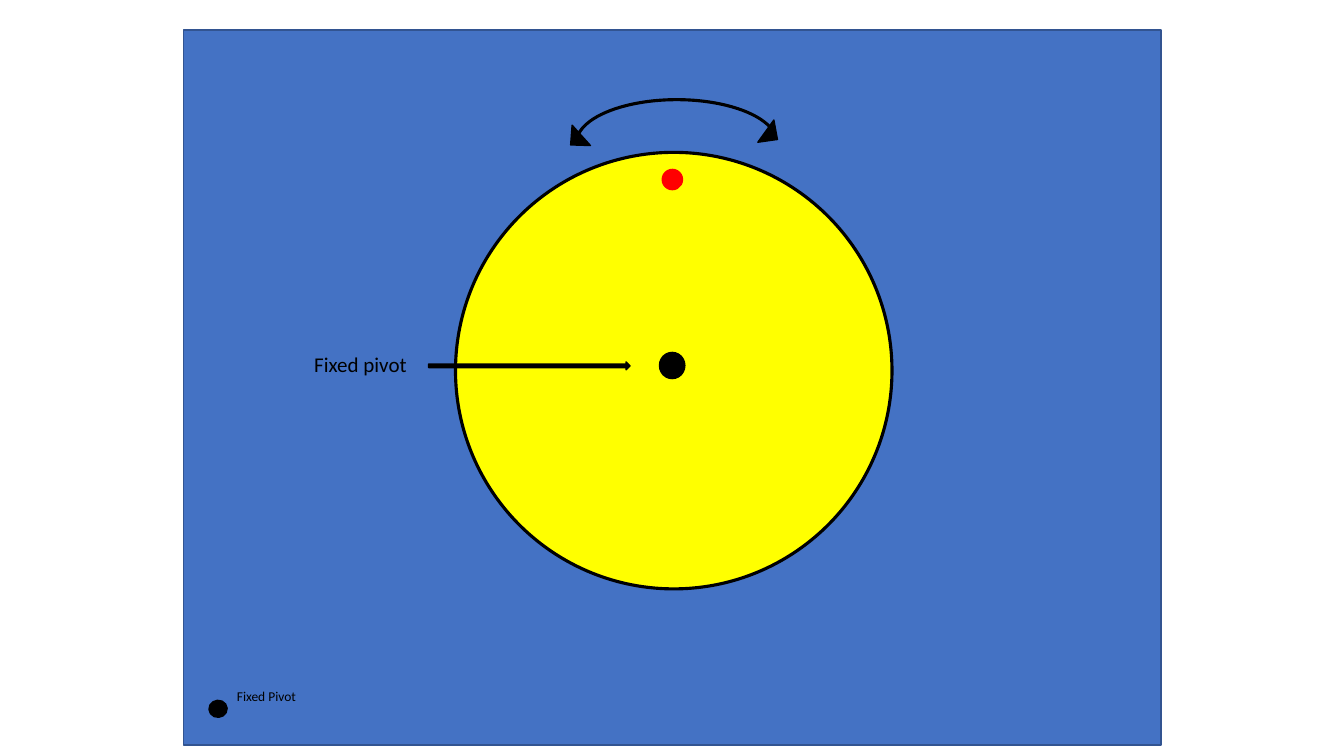
from dataclasses import dataclass

from pptx import Presentation
from pptx.dml.color import RGBColor
from pptx.enum.shapes import MSO_SHAPE as Preset
from pptx.util import Cm, Pt


@dataclass(frozen=True)
class Theme:
    font: str = "Calibri"
    ink: str = "000000"
    board: str = "4472C4"
    board_edge: str = "325491"
    disc: str = "FFFF00"
    marker: str = "FF0000"
    label_size: float = 15
    legend_size: float = 9.6
    thin: float = 1
    bold: float = 2.25


class PivotSlide:
    def __init__(self, slide, theme):
        self.shapes = slide.shapes
        self.theme = theme

    def figure(self, preset, box, fill, edge=None, weight=None, turn=0, adjust=()):
        figure = self.shapes.add_shape(preset, *map(Cm, box))
        figure.shadow.inherit = False
        figure.rotation = turn
        for index, value in enumerate(adjust):
            figure.adjustments[index] = value
        figure.fill.solid()
        figure.fill.fore_color.rgb = RGBColor.from_string(fill)
        figure.line.color.rgb = RGBColor.from_string(edge or fill)
        figure.line.width = Pt(weight or self.theme.thin)

    def label(self, words, box, size):
        frame = self.shapes.add_textbox(*map(Cm, box)).text_frame
        frame.word_wrap = True
        frame.text = words
        font = frame.paragraphs[0].runs[0].font
        font.name = self.theme.font
        font.size = Pt(size)
        font.color.rgb = RGBColor.from_string(self.theme.ink)


def main():
    deck = Presentation()
    deck.slide_width, deck.slide_height = Cm(33.87), Cm(19.05)
    theme = Theme()
    pivot = PivotSlide(deck.slides.add_slide(deck.slide_layouts[6]), theme)

    pivot.figure(Preset.RECTANGLE, (4.62, 0.76, 24.64, 18.01), theme.board, theme.board_edge)

    pivot.figure(Preset.OVAL, (5.28, 17.63, 0.43, 0.46), theme.ink, turn=266)
    pivot.label("Fixed Pivot", (5.72, 17.22, 2.72, 0.66), theme.legend_size)

    pivot.figure(Preset.BLOCK_ARC, (14.5, 2.49, 5.11, 2.24), theme.ink,
                 adjust=(111.09, 211.87, 0.02))
    for left, top, turn in ((14.17, 3.35, 228), (19.1, 3.23, 125.8)):
        pivot.figure(Preset.ISOSCELES_TRIANGLE, (left, top, 0.69, 0.36), theme.ink, turn=turn)

    pivot.label("Fixed pivot", (7.67, 8.74, 4.75, 1.19), theme.label_size)
    pivot.figure(Preset.OVAL, (11.48, 3.84, 11, 11), theme.disc, theme.ink, theme.bold)
    pivot.figure(Preset.OVAL, (16.69, 4.27, 0.51, 0.51), theme.marker)
    pivot.figure(Preset.OVAL, (16.61, 8.89, 0.66, 0.64), theme.ink, turn=270)
    pivot.figure(Preset.RIGHT_ARROW, (10.8, 9.12, 5.08, 0.2), theme.ink, adjust=(0.43, 0.5))

    deck.save("out.pptx")


if __name__ == "__main__":
    main()
